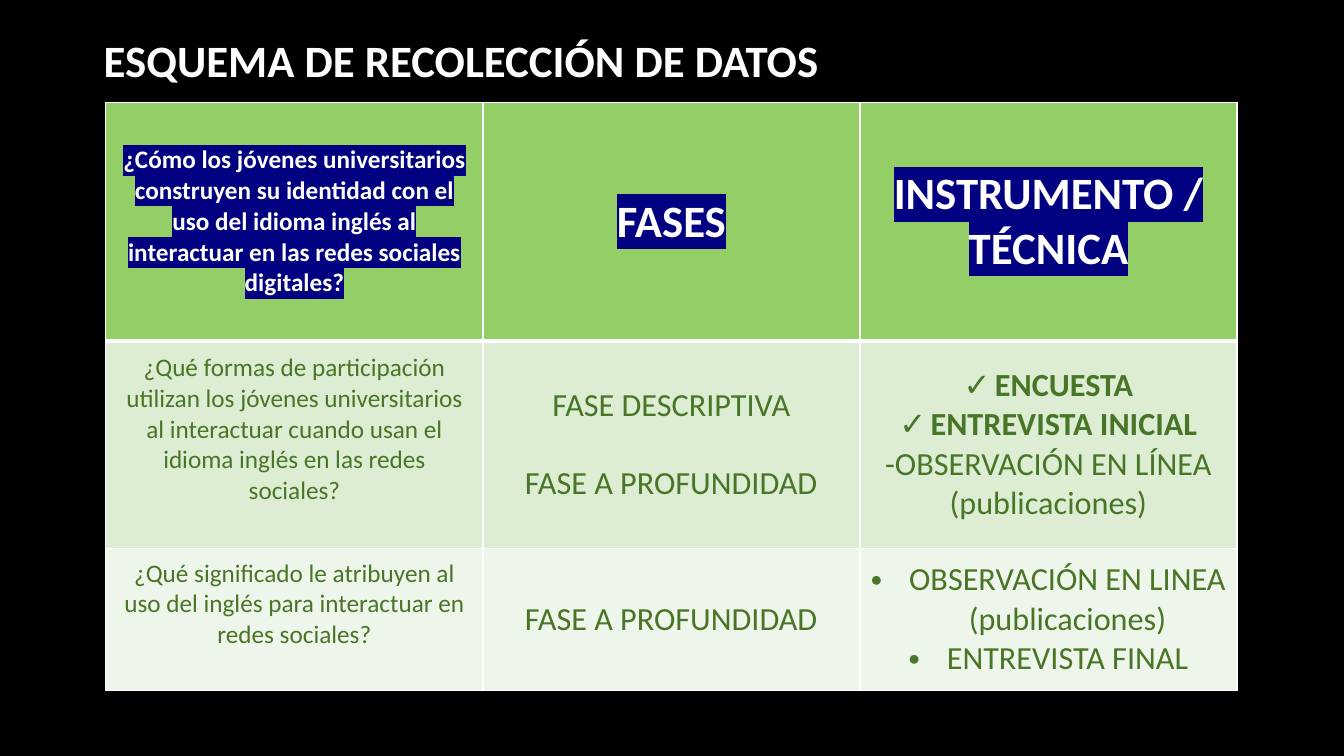
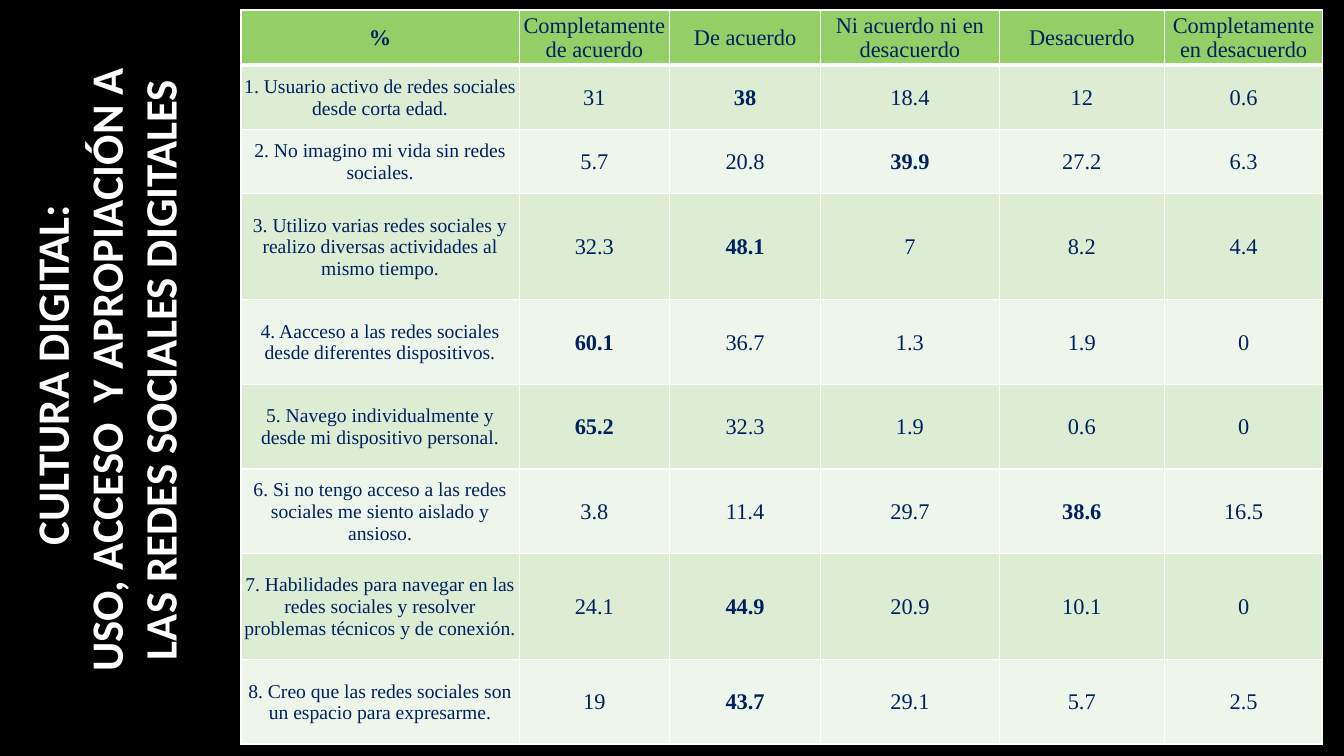
from lxml import etree
from pptx import Presentation
from pptx.dml.color import RGBColor
from pptx.enum.text import MSO_ANCHOR, PP_ALIGN
from pptx.oxml.ns import qn
from pptx.util import Inches, Pt

LEFT, CENTER = PP_ALIGN.LEFT, PP_ALIGN.CENTER
MIDDLE = MSO_ANCHOR.MIDDLE


class Theme:
    black, white = "000000", "FFFFFF"
    head, odd, even = "94CE67", "DCEDD3", "EEF6EB"
    green, navy, mark = "487526", "002060", "000080"
    sans, serif = "Calibri", "Times New Roman"
    title, phase, ask = 32, 23, 18
    value, item = 16, 14
    thin, thick = 1, 3


def write(frame, text, size, color, font=Theme.sans, bold=False, align=CENTER,
          before=0, bullet=None, indent=0, mark=None):
    """Add one paragraph, filling the empty first one if there is one."""
    para = frame.paragraphs[0]
    if para.runs:
        para = frame.add_paragraph()
    para.alignment = align
    if before:
        para.space_before = Pt(before)
    if bullet:
        props = para._p.get_or_add_pPr()
        props.set("marL", str(Inches(indent)))
        props.set("indent", str(-Inches(indent)))
        etree.SubElement(props, qn("a:buFont"), typeface="Arial")
        etree.SubElement(props, qn("a:buChar"), char=bullet)
    run = para.add_run()
    run.text = text
    run.font.size, run.font.bold, run.font.name = Pt(size), bold, font
    run.font.color.rgb = RGBColor.from_string(color)
    if mark:
        light = etree.Element(qn("a:highlight"))
        etree.SubElement(light, qn("a:srgbClr"), val=mark)
        run._r.rPr.find(qn("a:solidFill")).addnext(light)


def grid(slide, left, top, cols, rows, pads):
    """Add a table with green bands and white rules; pads are left, top, right, bottom."""
    table = slide.shapes.add_table(
        len(rows), len(cols), Inches(left), Inches(top),
        Inches(sum(cols)), Inches(sum(rows))).table
    table.first_row = table.horz_banding = False
    for col, width in zip(table.columns, cols):
        col.width = Inches(width)
    for r, height in enumerate(rows):
        table.rows[r].height = Inches(height)
        fill = Theme.head if r == 0 else Theme.odd if r % 2 else Theme.even
        rules = {"lnL": Theme.thin, "lnR": Theme.thin,
                 "lnT": Theme.thick if r == 1 else Theme.thin,
                 "lnB": Theme.thick if r == 0 else Theme.thin}
        for cell in table.rows[r].cells:
            cell.vertical_anchor = MIDDLE
            (cell.margin_left, cell.margin_top,
             cell.margin_right, cell.margin_bottom) = map(Inches, pads)
            cell.fill.solid()
            cell.fill.fore_color.rgb = RGBColor.from_string(fill)
            props = cell._tc.get_or_add_tcPr()
            for place, (tag, weight) in enumerate(rules.items()):
                line = etree.Element(qn("a:" + tag), w=str(Pt(weight)))
                paint = etree.SubElement(line, qn("a:solidFill"))
                etree.SubElement(paint, qn("a:srgbClr"), val=Theme.white)
                props.insert(place, line)
    return table


deck = Presentation()
deck.slide_width, deck.slide_height = Inches(13.33), Inches(7.5)

# Slides with their titles
titles = [
    (["ESQUEMA DE RECOLECCIÓN DE DATOS"], (0.93, 0, 11.08, 1.18), 0, LEFT),
    (["CULTURA DIGITAL: ", "USO, ACCESO  Y APROPIACIÓN A LAS REDES SOCIALES DIGITALES"],
     (-2.39, 2.83, 6.86, 1.68), 270, CENTER),
]
slides = []
for lines, area, turn, align in titles:
    slide = deck.slides.add_slide(deck.slide_layouts[6])
    slide.background.fill.solid()
    slide.background.fill.fore_color.rgb = RGBColor.from_string(Theme.black)
    box = slide.shapes.add_textbox(*map(Inches, area))
    box.rotation = turn
    box.text_frame.word_wrap = True
    box.text_frame.vertical_anchor = MIDDLE
    for line in lines:
        write(box.text_frame, line, Theme.title, Theme.white, bold=True, align=align)
    slides.append(slide)

# Data collection plan
label = dict(size=Theme.title, color=Theme.white, bold=True, mark=Theme.mark)
lead = label | dict(size=Theme.ask)
ask = dict(size=Theme.ask, color=Theme.green)
phase = dict(size=Theme.phase, color=Theme.green)
check = phase | dict(bold=True, bullet="✓", indent=0.31)
dot = phase | dict(bullet="•", indent=0.38)
plan = [
    [[("¿Cómo los jóvenes universitarios construyen su identidad con el uso del idioma "
       "inglés al interactuar en las redes sociales digitales?", lead)],
     [("FASES", label)],
     [("INSTRUMENTO / TÉCNICA", label)]],
    [[("¿Qué formas de participación utilizan los jóvenes universitarios al interactuar "
       "cuando usan el idioma inglés en las redes sociales?", ask)],
     [("FASE DESCRIPTIVA", phase), ("FASE A PROFUNDIDAD", phase | dict(before=28))],
     [("ENCUESTA", check), ("ENTREVISTA INICIAL", check),
      ("-OBSERVACIÓN EN LÍNEA (publicaciones)", phase)]],
    [[("¿Qué significado le atribuyen al uso del inglés para interactuar en redes "
       "sociales?", ask)],
     [("FASE A PROFUNDIDAD", phase)],
     [("OBSERVACIÓN EN LINEA (publicaciones)", dot), ("ENTREVISTA FINAL", dot)]],
]
table = grid(slides[0], 1.05, 1.02, [3.74] * 3, [2.36, 2.06, 1.41], (0.1, 0.05, 0.1, 0.05))
for r, row in enumerate(plan):
    for c, lines in enumerate(row):
        for text, look in lines:
            write(table.cell(r, c).text_frame, text, **look)
    if r:
        table.cell(r, 0).margin_bottom = Inches(0.35)

# Survey results, with the top answer of each row in bold
heads = ["%", "Completamente de acuerdo", "De acuerdo", "Ni acuerdo ni en desacuerdo",
         "Desacuerdo", "Completamente en desacuerdo"]
survey = [
    ("1. Usuario activo de redes sociales desde corta edad.", 31, 38, 18.4, 12, 0.6),
    ("2. No imagino mi vida sin redes sociales.", 5.7, 20.8, 39.9, 27.2, 6.3),
    ("3. Utilizo varias redes sociales y realizo diversas actividades al mismo tiempo.",
     32.3, 48.1, 7, 8.2, 4.4),
    ("4. Aacceso a las redes sociales desde diferentes dispositivos.",
     60.1, 36.7, 1.3, 1.9, 0),
    ("5. Navego individualmente y desde mi dispositivo personal.",
     65.2, 32.3, 1.9, 0.6, 0),
    ("6. Si no tengo acceso a las redes sociales me siento aislado y ansioso.",
     3.8, 11.4, 29.7, 38.6, 16.5),
    ("7. Habilidades para navegar en las redes sociales y resolver problemas técnicos "
     "y de conexión.", 24.1, 44.9, 20.9, 10.1, 0),
    ("8. Creo que las redes sociales son un espacio para expresarme.",
     19, 43.7, 29.1, 5.7, 2.5),
]
table = grid(slides[1], 2.39, 0.1, [2.76, 1.49, 1.5, 1.77, 1.64, 1.57],
             [0.53, 0.64, 0.64, 1.05, 0.84, 0.84, 0.84, 1.05, 0.84], (0.01, 0.01, 0.01, 0))
for c, head in enumerate(heads):
    write(table.cell(0, c).text_frame, head, Theme.value, Theme.navy, Theme.serif,
          bold=c == 0)
for r, (item, *values) in enumerate(survey, 1):
    write(table.cell(r, 0).text_frame, item, Theme.item, Theme.navy, Theme.serif)
    for c, value in enumerate(values, 1):
        write(table.cell(r, c).text_frame, str(value), Theme.value, Theme.navy,
              Theme.serif, bold=value == max(values))

deck.save("out.pptx")
